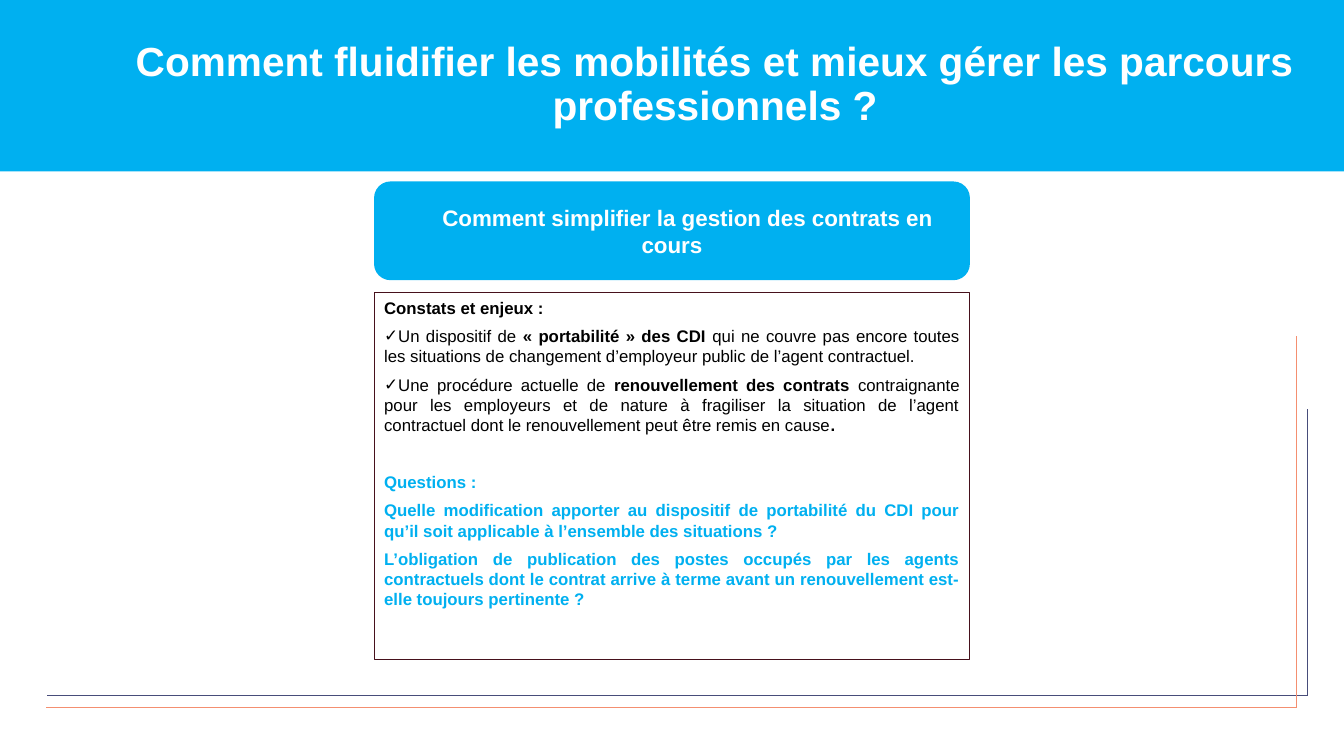
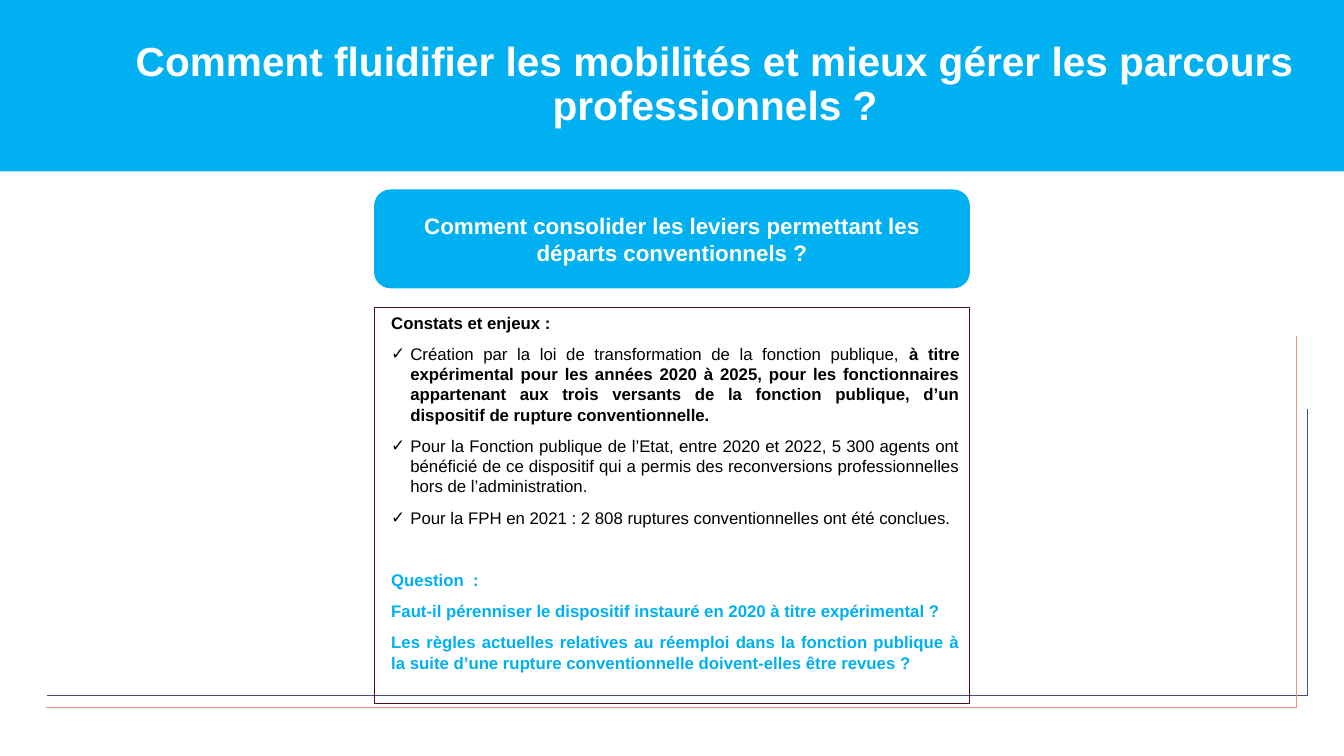
from lxml.etree import SubElement
from pptx import Presentation
from pptx.dml.color import RGBColor
from pptx.enum.shapes import MSO_CONNECTOR, MSO_SHAPE
from pptx.enum.text import MSO_ANCHOR, MSO_AUTO_SIZE, PP_ALIGN
from pptx.oxml.ns import qn
from pptx.util import Inches, Pt

BLUE = RGBColor(0x00, 0xB0, 0xF0)
NAVY = RGBColor(0x48, 0x4D, 0x7A)
CORAL = RGBColor(0xF4, 0x8F, 0x70)
WINE = RGBColor(0x46, 0x11, 0x1C)
WHITE = RGBColor(0xFF, 0xFF, 0xFF)
BLACK = RGBColor(0x00, 0x00, 0x00)

WIDE, HIGH = 13.33, 7.5
BAND = 1.7
CARD = 5.91
LEFT = (WIDE - CARD) / 2
PILL = 0.98
LINE = 14

TITLE = "Comment fluidifier les mobilités et mieux gérer les parcours professionnels ?"
FRAME = [
    (NAVY, 0.47, 12.97, 6.9, 4.06),
    (CORAL, 0.46, 12.86, 7.02, 3.33),
]
PAGES = [
    {
        "head": "Comment simplifier la gestion des contrats en cours",
        "shift": 0.31, "pill": 1.8, "card": (2.9, 3.64),
        "gap": 6, "edge": 0, "hang": 0,
        "facts": [
            "Un dispositif de *« portabilité » des CDI *qui ne couvre pas encore toutes les situations de changement d’employeur public de l’agent contractuel.",
            "Une procédure actuelle de *renouvellement des contrats *contraignante pour les employeurs et de nature à fragiliser la situation de l’agent contractuel dont le renouvellement peut être remis en cause*.*",
        ],
        "label": "Questions :",
        "asks": [
            "Quelle modification apporter au dispositif de portabilité du CDI pour qu’il soit applicable à l’ensemble des situations ?",
            "L’obligation de publication des postes occupés par les agents contractuels dont le contrat arrive à terme avant un renouvellement est-elle toujours pertinente ?",
        ],
    },
    {
        "head": "Comment consolider les leviers permettant les départs conventionnels ?",
        "shift": 0, "pill": 1.88, "card": (3.05, 3.93),
        "gap": 8, "edge": 0.07, "hang": 0.19,
        "facts": [
            "Création par la loi de transformation de la fonction publique, *à titre expérimental pour les années 2020 à 2025, pour les fonctionnaires appartenant aux trois versants de la fonction publique, d’un dispositif de rupture conventionnelle.*",
            "Pour la Fonction publique de l’Etat, entre 2020 et 2022, 5 300 agents ont bénéficié de ce dispositif qui a permis des reconversions professionnelles hors de l’administration.",
            "Pour la FPH en 2021 : 2 808 ruptures conventionnelles ont été conclues.",
        ],
        "label": "Question  :",
        "asks": [
            "Faut-il pérenniser le dispositif instauré en 2020 à titre expérimental ?",
            "Les règles actuelles relatives au réemploi dans la fonction publique à la suite d’une rupture conventionnelle doivent-elles être revues ?",
        ],
    },
]


def put(box, text, size=12, color=BLACK, bold=True, align=PP_ALIGN.JUSTIFY,
        before=0, space=1, left=0, first=0, mark=None):
    para = box.paragraphs[0]
    if para.runs:
        para = box.add_paragraph()
    props = para._p.get_or_add_pPr()
    props.set("marL", str(Inches(left)))
    props.set("indent", str(Inches(first)))
    if mark:
        SubElement(props, qn("a:buFont")).set("typeface", "Arial")
        SubElement(props, qn("a:buChar")).set("char", mark)
    else:
        SubElement(props, qn("a:buNone"))
    para.alignment = align
    para.line_spacing = space
    para.space_before = Pt(before)
    for num, part in enumerate(text.split("*")):
        if part:
            run = para.add_run()
            run.text = part
            font = run.font
            font.name, font.size = "Arial", Pt(size)
            font.bold = bold or num % 2 == 1
            font.color.rgb = color


def place(shape, left, top, width, height):
    shape.left, shape.top = Inches(left), Inches(top)
    shape.width, shape.height = Inches(width), Inches(height)


def setup(shape, anchor):
    box = shape.text_frame
    box.word_wrap = True
    box.auto_size = MSO_AUTO_SIZE.NONE
    box.vertical_anchor = anchor
    return box


def paint(shape):
    shape.fill.solid()
    shape.fill.fore_color.rgb = BLUE
    shape.line.fill.background()


def rule(slide, layout, color, *ends):
    line = slide.shapes.add_connector(MSO_CONNECTOR.STRAIGHT, *map(Inches, ends))
    line.line.color.rgb = color
    line.line.width = Pt(1)
    SubElement(line.element.spPr, qn("a:effectLst"))
    layout.shapes.element.append(line.element)


def banner(slide):
    title = slide.shapes.title
    place(title, 0, 0, WIDE, BAND)
    paint(title)
    box = setup(title, MSO_ANCHOR.MIDDLE)
    box.margin_left = Inches(0.94)
    box.margin_right = box.margin_top = box.margin_bottom = Inches(0.08)
    put(box, TITLE, size=29, color=WHITE, align=PP_ALIGN.CENTER, space=0.9)


def topic(slide, page):
    dims = map(Inches, (LEFT, page["pill"], CARD, PILL))
    pill = slide.shapes.add_shape(MSO_SHAPE.ROUNDED_RECTANGLE, *dims)
    pill.shadow.inherit = False
    paint(pill)
    put(setup(pill, MSO_ANCHOR.MIDDLE), page["head"], size=16, color=WHITE,
        align=PP_ALIGN.CENTER, first=page["shift"])


def detail(slide, page):
    body = slide.placeholders[1]
    top, tall = page["card"]
    place(body, LEFT, top, CARD, tall)
    body.line.color.rgb = WINE
    body.line.width = Pt(0.75)
    box = setup(body, MSO_ANCHOR.TOP)
    gap, edge, hang = page["gap"], page["edge"], page["hang"]
    put(box, "Constats et enjeux :", left=edge)
    for fact in page["facts"]:
        put(box, fact, bold=False, before=gap, left=edge + hang, first=-hang, mark="✓")
    put(box, page["label"], color=BLUE, before=2 * gap + LINE, left=edge)
    for ask in page["asks"]:
        put(box, ask, color=BLUE, before=gap, left=edge)


def main():
    deck = Presentation()
    deck.slide_width, deck.slide_height = Inches(WIDE), Inches(HIGH)
    layout = deck.slide_layouts[1]
    for page in PAGES:
        slide = deck.slides.add_slide(layout)
        banner(slide)
        detail(slide, page)
        topic(slide, page)
    for color, left, right, base, top in FRAME:
        rule(slide, layout, color, left, base, right, base)
        rule(slide, layout, color, right, base, right, top)
    deck.save("out.pptx")


if __name__ == "__main__":
    main()
